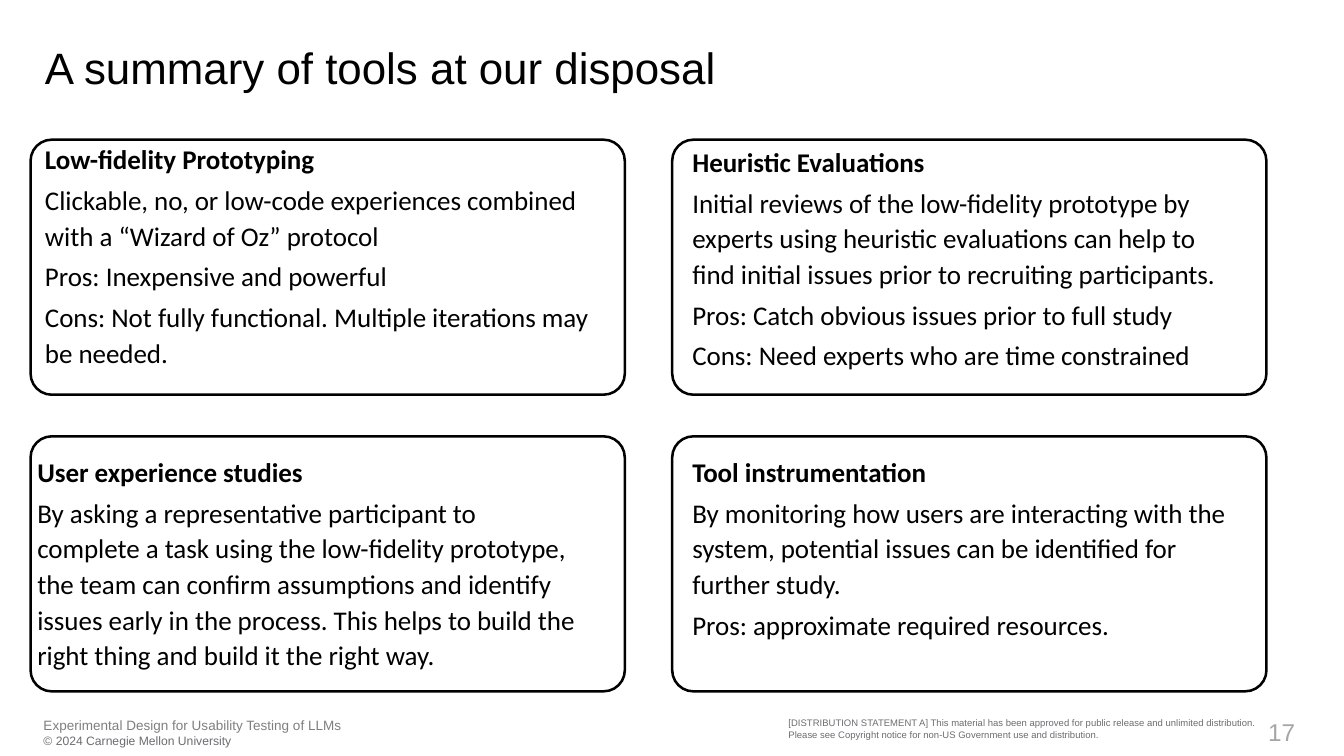
"""Build the slide that sums up four usability testing tools."""
import pptx
import pptx.util
import pptx.dml.color
import pptx.enum.shapes
import pptx.enum.text

Cm, Pt = pptx.util.Cm, pptx.util.Pt
COLORS = {"black": "000000", "white": "FFFFFF", "footer": "7F7F7F",
          "notice": "6C6D71", "number": "A6A6A6"}


def rgb(name):
    return pptx.dml.color.RGBColor.from_string(COLORS[name])


def add_run(p, text, color, **formats):
    r = p.add_run()
    r.text = text
    r.font.color.rgb = rgb(color)
    for key, value in formats.items():
        setattr(r.font, key, value)


prs = pptx.Presentation()
prs.slide_width, prs.slide_height = Cm(28.09), Cm(15.8)
s = prs.slides.add_slide(prs.slide_layouts[5])
no_margins = dict.fromkeys(
    ("margin_left", "margin_top", "margin_right", "margin_bottom"), 0)
frame_format = {"word_wrap": True,
                "auto_size": pptx.enum.text.MSO_AUTO_SIZE.NONE,
                "vertical_anchor": pptx.enum.text.MSO_ANCHOR.TOP}

title = s.shapes.title
title.left, title.top, title.width, title.height = (
    Cm(0.94), Cm(0.84), Cm(23.9), Cm(2.08))
for key, value in {**frame_format, **no_margins}.items():
    setattr(title.text_frame, key, value)
p = title.text_frame.paragraphs[0]
p.alignment = pptx.enum.text.PP_ALIGN.LEFT
add_run(p, "A summary of tools at our disposal", "black",
        name="Arial", size=Pt(26))

for left in (0.64, 14.05):
    for top in (2.92, 9.12):
        card = s.shapes.add_shape(
            pptx.enum.shapes.MSO_SHAPE.ROUNDED_RECTANGLE,
            Cm(left), Cm(top), Cm(12.42), Cm(5.33))
        card.adjustments[0] = 0.083
        card.shadow.inherit = False
        card.fill.solid()
        card.fill.fore_color.rgb = rgb("white")
        card.line.color.rgb = rgb("black")
        card.line.width = Pt(1.5)

tools = [
    ((0.94, 2.92, 11.48, 5.33), no_margins, 1.1, [
        "Low-fidelity Prototyping",
        "Clickable, no, or low-code experiences combined with a “Wizard of Oz” protocol",
        "Pros: Inexpensive and powerful",
        "Cons: Not fully functional. Multiple iterations may be needed."]),
    ((14.22, 2.92, 11.5, 4.98), {}, 1.0, [
        "Heuristic Evaluations",
        "Initial reviews of the low-fidelity prototype by experts using heuristic "
        "evaluations can help to find initial issues prior to recruiting participants.",
        "Pros: Catch obvious issues prior to full study",
        "Cons: Need experts who are time constrained"]),
    ((0.53, 9.4, 11.91, 4.78), {}, 1.0, [
        "User experience studies",
        "By asking a representative participant to complete a task using the "
        "low-fidelity prototype, the team can confirm assumptions and identify issues "
        "early in the process. This helps to build the right thing and build it the "
        "right way."]),
    ((14.22, 9.4, 11.96, 4.85), {}, 1.0, [
        "Tool instrumentation",
        "By monitoring how users are interacting with the system, potential issues "
        "can be identified for further study.",
        "Pros: approximate required resources."]),
]
for box, margins, heading_spacing, texts in tools:
    tf = s.shapes.add_textbox(*map(Cm, box)).text_frame
    for key, value in {**frame_format, **margins}.items():
        setattr(tf, key, value)
    for i, text in enumerate(texts):
        p = tf.add_paragraph() if i else tf.paragraphs[0]
        p.line_spacing = 1.1 if i else heading_spacing
        p.space_before = Pt(3 if i else 0)
        add_run(p, text, "black", name="Calibri", size=Pt(16), bold=i == 0)

left_align, right_align = pptx.enum.text.PP_ALIGN.LEFT, pptx.enum.text.PP_ALIGN.RIGHT
footers = [
    ((0.91, 14.99, 11.43, 0.66), left_align, [
        ("Experimental Design for Usability Testing of LLMs", "footer", 8),
        ("© 2024 Carnegie Mellon University", "notice", 7.2)]),
    ((25.37, 14.99, 1.7, 0.64), right_align, [("17", "number", 14.4)]),
    ((16.48, 14.99, 9.82, 0.64), left_align, [
        ("[DISTRIBUTION STATEMENT A] This material has been approved for public "
         "release and unlimited distribution. Please see Copyright notice for non-US "
         "Government use and distribution.", "notice", 5.6)]),
]
for box, alignment, lines in footers:
    tf = s.shapes.add_textbox(*map(Cm, box)).text_frame
    for key, value in {**frame_format, **no_margins}.items():
        setattr(tf, key, value)
    p = tf.paragraphs[0]
    p.alignment = alignment
    for i, (text, color, size) in enumerate(lines):
        if i:
            p.add_line_break()
        add_run(p, text, color, name="Arial", size=Pt(size))

prs.save("out.pptx")
